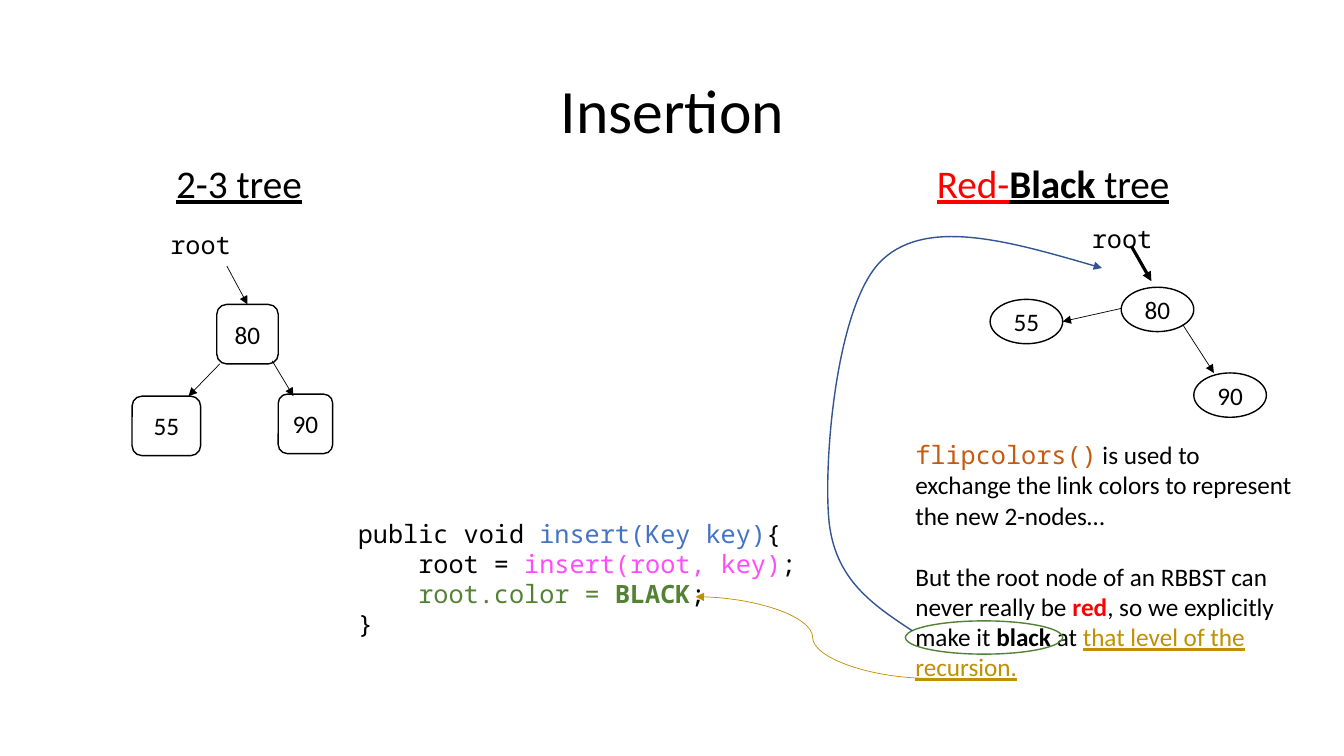
import pptx
import pptx.dml.color
import pptx.enum.shapes
import pptx.enum.text
import pptx.oxml.ns
import pptx.util
from lxml import etree

RGB = pptx.dml.color.RGBColor
SHAPES = pptx.enum.shapes.MSO_SHAPE
CONNECTORS = pptx.enum.shapes.MSO_CONNECTOR
ALIGN = pptx.enum.text.PP_ALIGN
ANCHOR = pptx.enum.text.MSO_ANCHOR
qn = pptx.oxml.ns.qn

BLACK = RGB(0, 0, 0)
RED = RGB(0xFF, 0, 0)
ORANGE = RGB(0xC5, 0x5A, 0x11)
GOLD = RGB(0xBF, 0x90, 0x00)
BLUE = RGB(0x44, 0x72, 0xC4)
NAVY = RGB(0x32, 0x54, 0x91)
PINK = RGB(0xFF, 0x4C, 0xFB)
GREEN = RGB(0x54, 0x82, 0x35)

SANS, MONO = "Calibri", "Noto Sans Mono"
SCALE = 9144  # EMU per px, 100 px to the inch


def px(length):
    return pptx.util.Emu(length * SCALE)


def span(text, color=BLACK, font=SANS, bold=False, underline=False):
    return text, color, font, bold, underline


def write(para, spans, size=18, align=ALIGN.LEFT):
    para.alignment = align
    for text, color, font, bold, underline in spans:
        run = para.add_run()
        run.text = text
        run.font.name = font
        run.font.size = pptx.util.Pt(size)
        run.font.color.rgb = color
        run.font.bold = bold
        run.font.underline = underline


def add_text(page, left, top, width, height, paragraphs, size=18, align=ALIGN.LEFT):
    box = page.shapes.add_textbox(px(left), px(top), px(width), px(height))
    frame = box.text_frame
    frame.word_wrap = True
    for index, spans in enumerate(paragraphs):
        para = frame.add_paragraph() if index else frame.paragraphs[0]
        write(para, spans, size, align)
    return frame


def style_line(shape, color, weight, arrow=False):
    shape.line.color.rgb = color
    shape.line.width = pptx.util.Pt(weight)
    if arrow:
        etree.SubElement(shape.line._get_or_add_ln(), qn("a:tailEnd"), type="triangle")


def add_outline(page, kind, left, top, width, height, color=BLACK):
    shape = page.shapes.add_shape(kind, px(left), px(top), px(width), px(height))
    shape.shadow.inherit = False
    shape.fill.background()
    style_line(shape, color, 1)
    return shape


def add_arrow(page, start, end, color=BLACK, weight=0.5, kind=CONNECTORS.STRAIGHT):
    arrow = page.shapes.add_connector(kind, *map(px, start + end))
    style_line(arrow, color, weight, arrow=True)
    etree.SubElement(arrow._element.spPr, qn("a:effectLst"))
    return arrow


def add_curve(page, points, color):
    """Draw a Bezier arrow: a start, then two handles and an end for each piece."""
    builder = page.shapes.build_freeform(*points[0], scale=SCALE)
    builder.add_line_segments(points[1:], close=False)
    curve = builder.convert_to_shape()
    curve.shadow.inherit = False
    curve.fill.background()
    style_line(curve, color, 1, arrow=True)
    outline = next(curve._element.iter(qn("a:path")))
    steps = outline.findall(qn("a:lnTo"))
    for first in range(0, len(steps), 3):
        bezier = etree.SubElement(outline, qn("a:cubicBezTo"))
        for step in steps[first:first + 3]:
            bezier.append(step[0])
            outline.remove(step)


def draw_tree(page, left, top, heading, root_at, kind, nodes, links):
    """Draw a headed tree; every place is relative to the heading's corner."""
    title, width = heading
    add_text(page, left, top, width, 57, [title], 28, ALIGN.CENTER)
    add_text(page, left + root_at[0], top + root_at[1], 131, 40,
             [[span("root", font=MONO)]])
    shapes = {}
    for label, (x, y, node_width, node_height) in nodes.items():
        node = add_outline(page, kind, left + x, top + y, node_width, node_height)
        frame = node.text_frame
        frame.vertical_anchor = ANCHOR.MIDDLE
        write(frame.paragraphs[0], [span(label)], align=ALIGN.CENTER)
        shapes[label] = node
    arrows = [add_arrow(page, (left + x1, top + y1), (left + x2, top + y2), weight=weight)
              for x1, y1, x2, y2, weight in links]
    return shapes, arrows


def draw_two_three_tree(page, left, top):
    heading = [span("2-3 tree", underline=True)], 216
    nodes = {"80": (86, 149, 61, 59), "55": (2, 240, 68, 59), "90": (147, 238, 54, 59)}
    links = [(96, 111, 116, 149, 0.5), (141, 205, 162, 240, 0.5), (89, 208, 58, 240, 0.5)]
    shapes, arrows = draw_tree(page, left, top, heading, (30, 70),
                               SHAPES.ROUNDED_RECTANGLE, nodes, links)
    arrows[0].end_connect(shapes["80"], 0)


def draw_red_black_tree(page, left, top):
    heading = [span("Red-", RED, underline=True),
               span("Black", bold=True, underline=True),
               span(" tree", underline=True)], 269
    places = {"80": (202, 132), "55": (72, 144), "90": (274, 217)}
    nodes = {label: place + (72, 44) for label, place in places.items()}
    links = [(212, 91, 232, 126, 2.25), (202, 153, 144, 166, 0.5), (263, 169, 294, 217, 0.5)]
    draw_tree(page, left, top, heading, (163, 64), SHAPES.OVAL, nodes, links)


def draw_explanation(page, left, top):
    frame = add_text(page, left, top, 395, 252, [
        [span("flipcolors()", ORANGE, MONO),
         span(" is used to exchange the link colors to represent the new 2-nodes…")],
        [span("But the root node of an RBBST can never really be "),
         span("red", RED, bold=True),
         span(", so we explicitly make it "),
         span("black ", bold=True),
         span("at "),
         span("that level of the recursion.", GOLD, underline=True)]])
    frame.paragraphs[1].space_before = pptx.util.Pt(22)
    add_outline(page, SHAPES.OVAL, left, top + 185, 156, 33, GREEN)


def draw_code(page, left, top):
    frame = add_text(page, left, top, 469, 131, [
        [span("public void ", font=MONO), span("insert(Key key)", BLUE, MONO),
         span("{", font=MONO)],
        [span("root = ", font=MONO), span("insert(root, key)", PINK, MONO),
         span(";", font=MONO)],
        [span("root.color = ", GREEN, MONO), span("BLACK", GREEN, MONO, bold=True),
         span(";", font=MONO)],
        [span("}", font=MONO)]])
    for para in frame.paragraphs[1:3]:
        para._p.get_or_add_pPr().set("marL", str(px(60)))


def draw_title(page, left, top, width, height):
    frame = add_text(page, left, top, width, height, [[span("Insertion")]], 44, ALIGN.CENTER)
    frame.vertical_anchor = ANCHOR.MIDDLE
    frame.paragraphs[0].line_spacing = 0.9


def main():
    deck = pptx.Presentation()
    deck.slide_width, deck.slide_height = px(1333), px(750)
    page = deck.slides.add_slide(deck.slide_layouts[6])
    draw_title(page, 92, 40, 1150, 145)
    draw_two_three_tree(page, 129, 153)
    draw_red_black_tree(page, 910, 153)
    draw_explanation(page, 898, 431)
    draw_code(page, 345, 509)
    add_curve(page, [(905, 626), (866, 600), (827, 575), (822, 514),
                     (817, 453), (830, 298), (876, 257),
                     (921, 216), (1007, 241), (1093, 266)][:1]
              + [(866, 600), (827, 575), (822, 514), (817, 453), (830, 298), (876, 257),
                 (921, 216), (1007, 241), (1093, 266)], NAVY)
    add_arrow(page, (922, 673), (690, 592), GOLD, kind=CONNECTORS.CURVE)
    deck.save("out.pptx")


if __name__ == "__main__":
    main()
